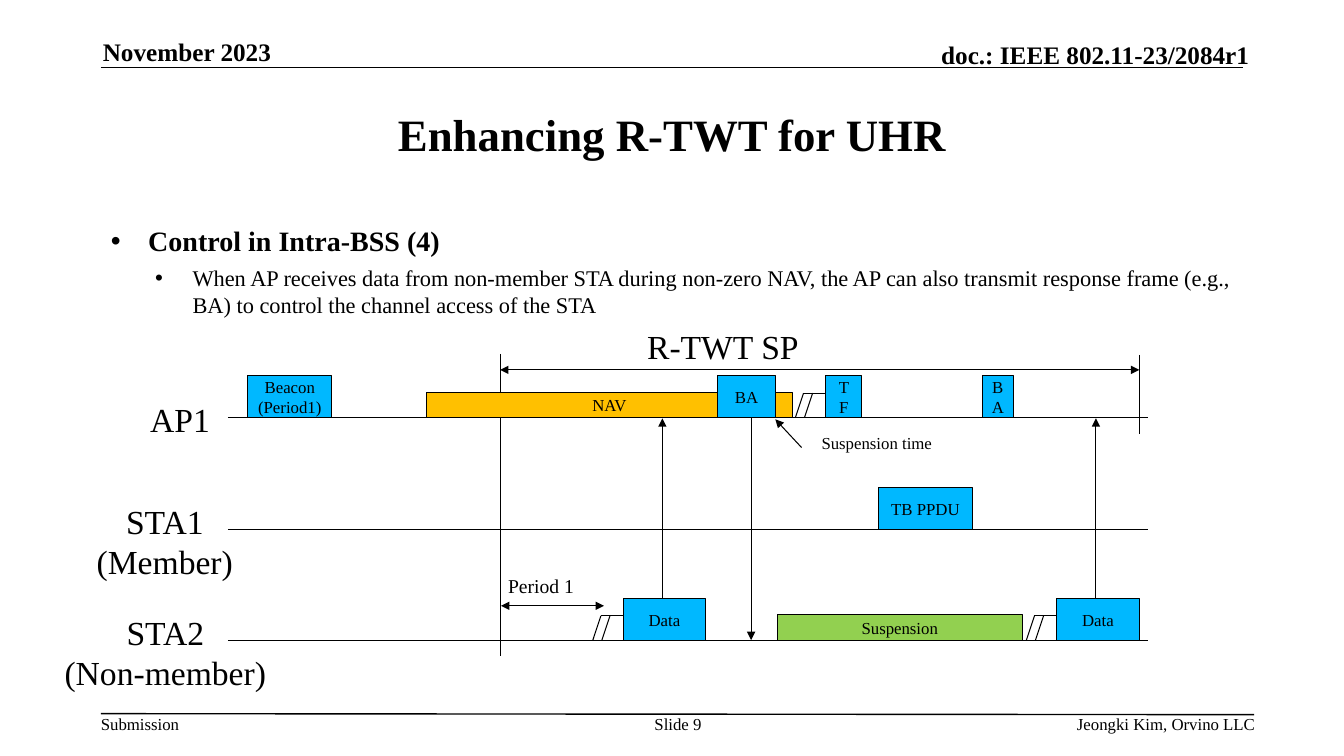
from dataclasses import dataclass

from lxml.etree import SubElement as Sub
from pptx import Presentation
from pptx.dml.color import RGBColor as Color
from pptx.enum.shapes import MSO_CONNECTOR as Conn, MSO_SHAPE as Shape
from pptx.enum.text import MSO_ANCHOR as Anchor, MSO_AUTO_SIZE as Fit, PP_ALIGN as Align
from pptx.oxml.ns import qn
from pptx.util import Pt

PX = 9144
LEFT, MID, RIGHT = Align.LEFT, Align.CENTER, Align.RIGHT


@dataclass(frozen=True)
class Theme:
    """Hold the colours, font and type sizes of the slide."""
    face: str = "Times New Roman"
    ink: str = "000000"
    blue: str = "00B8FF"
    gold: str = "FFC000"
    green: str = "92D050"
    title: int = 32
    lane: int = 24
    lead: int = 20
    head: int = 18
    body: int = 16
    span: int = 14
    small: int = 12
    rule: float = 1
    thin: float = 0.75


T = Theme()


def style(para, size, bold=False, align=None):
    """Set the font and alignment of one paragraph."""
    font = para.font
    font.name, font.size, font.bold = T.face, Pt(size), bold
    font.color.rgb = Color.from_string(T.ink)
    if align is not None:
        para.alignment = align


def place(shape, x, y, w, h):
    """Move a shape to a box given in px."""
    shape.left, shape.top, shape.width, shape.height = (v * PX for v in (x, y, w, h))


def fill_text(frame, text, size, bold, align):
    """Write one styled paragraph per line of text."""
    frame.word_wrap = True
    frame.text = text
    for para in frame.paragraphs:
        style(para, size, bold, align)


def label(slide, text, box, size, align=LEFT, bold=False, flush=False, anchor=Anchor.TOP):
    """Add a text box, with no margins when flush."""
    frame = slide.shapes.add_textbox(*(v * PX for v in box)).text_frame
    fill_text(frame, text, size, bold, align)
    frame.vertical_anchor = anchor
    if flush:
        frame.margin_left = frame.margin_right = 0
        frame.margin_top = frame.margin_bottom = 0


def block(slide, text, x, base, w, h=41, fill=T.blue):
    """Add a frame block that stands on a time line."""
    box = slide.shapes.add_shape(Shape.RECTANGLE, *(v * PX for v in (x, base - h, w, h)))
    box.shadow.inherit = False
    box.fill.solid()
    box.fill.fore_color.rgb = Color.from_string(fill)
    box.line.color.rgb = Color.from_string(T.ink)
    box.line.width = Pt(T.thin)
    box.text_frame.vertical_anchor = Anchor.MIDDLE
    fill_text(box.text_frame, text, T.small, False, MID)


def line(slide, x1, y1, x2, y2, ends=(), width=T.thin):
    """Add a straight line with arrowheads at the named ends."""
    link = slide.shapes.add_connector(Conn.STRAIGHT, *(v * PX for v in (x1, y1, x2, y2)))
    link.line.color.rgb = Color.from_string(T.ink)
    link.line.width = Pt(width)
    stroke = link.line._get_or_add_ln()
    for end in ends:
        Sub(stroke, qn(f"a:{end}"), type="triangle")
    Sub(link._element.spPr, qn("a:effectLst"))


def backoff(slide, x, base):
    """Draw the slanted backoff slots before a block at x."""
    top = base - 24
    for gap in (22, 13):
        line(slide, x - gap, top, x - gap - 8, base)
    line(slide, x, top, x - 22, top)


def bullet(para, size, bold, left, before):
    """Give a list paragraph its bullet, indent and font."""
    para.space_before = Pt(before)
    props = para._p.get_or_add_pPr()
    props.set("marL", str(left * PX))
    props.set("indent", str(-37 * PX))
    Sub(props, qn("a:buChar"), char="•")
    style(para, size, bold)


def heads(slide):
    """Fill the title and list placeholders."""
    title, body = slide.placeholders
    place(title, 100, 75, 1133, 116)
    fill_text(title.text_frame, "Enhancing R-TWT for UHR", T.title, True, MID)
    title.text_frame.vertical_anchor = Anchor.MIDDLE
    place(body, 100, 217, 1133, 450)
    frame = body.text_frame
    frame.text = (
        "Control in Intra-BSS (4)\n"
        "When AP receives data from non-member STA during non-zero NAV, the AP can also "
        "transmit response frame (e.g., BA) to control the channel access of the STA"
    )
    lead, note = frame.paragraphs
    note.level = 1
    bullet(lead, T.lead, True, 37, 6)
    bullet(note, T.body, False, 81, 5)
    for part in (title, body):
        part.text_frame.auto_size = Fit.NONE


def edges(slide):
    """Draw the header and footer."""
    line(slide, 100, 67, 1233, 67, width=T.rule)
    line(slide, 100, 708, 1244, 709, width=T.rule)
    for text, box, align in (
        ("November 2023", (102, 36, 273, 30), LEFT),
        ("doc.: IEEE 802.11-23/2084r1", (729, 39, 510, 30), RIGHT),
    ):
        label(slide, text, box, T.head, align, True, True, Anchor.BOTTOM)
    for text, box, align in (
        ("Submission", (100, 708, 90, 20), LEFT),
        ("Slide 9", (634, 708, 77, 20), MID),
        ("Jeongki Kim, Orvino LLC", (781, 708, 464, 20), RIGHT),
    ):
        label(slide, text, box, T.small, align, flush=True)


def chart(slide):
    """Draw the timing chart of the AP and both stations."""
    ap, sta1, sta2 = lanes = 414, 525, 635
    start, stop = 496, 1130
    both = "headEnd", "tailEnd"
    for base in lanes:
        line(slide, 226, base, 1139, base)
    line(slide, start, 351, start, 651)
    line(slide, stop, 352, stop, 431)
    line(slide, start, 367, stop, 367, both)
    line(slide, start + 1, 601, 599, 601, both)

    block(slide, "NAV", 423, ap, 363, 25, T.gold)
    block(slide, "Suspension", 771, sta2, 243, 25, T.green)
    for text, x, base, w in (
        ("Beacon\n(Period1)", 246, ap, 83),
        ("BA", 712, ap, 57),
        ("TF", 819, ap, 36),
        ("BA", 974, ap, 31),
        ("TB PPDU", 871, sta1, 94),
        ("Data", 618, sta2, 82),
        ("Data", 1048, sta2, 82),
    ):
        block(slide, text, x, base, w)
    for x, base in ((819, ap), (618, sta2), (1048, sta2)):
        backoff(slide, x, base)

    for x in (657, 1087):
        line(slide, x, 593, x, ap + 1, both[1:])
    line(slide, 745, ap + 1, 745, sta2, both[1:])
    line(slide, 795, 444, 769, 416, both[1:])

    for text, box, size, align in (
        ("R-TWT SP", (632, 318, 182, 50), T.lane, LEFT),
        ("AP1", (139, 391, 90, 50), T.lane, LEFT),
        ("STA1\n(Member)", (82, 492, 163, 91), T.lane, MID),
        ("STA2\n(Non-member)", (54, 602, 220, 91), T.lane, MID),
        ("Period 1", (494, 564, 112, 34), T.span, LEFT),
        ("Suspension time", (805, 424, 137, 30), T.small, LEFT),
    ):
        label(slide, text, box, size, align)


def main():
    """Build and save the slide."""
    deck = Presentation()
    deck.slide_width, deck.slide_height = 1333 * PX, 750 * PX
    slide = deck.slides.add_slide(deck.slide_layouts[1])
    edges(slide)
    heads(slide)
    chart(slide)
    deck.save("out.pptx")


if __name__ == "__main__":
    main()
